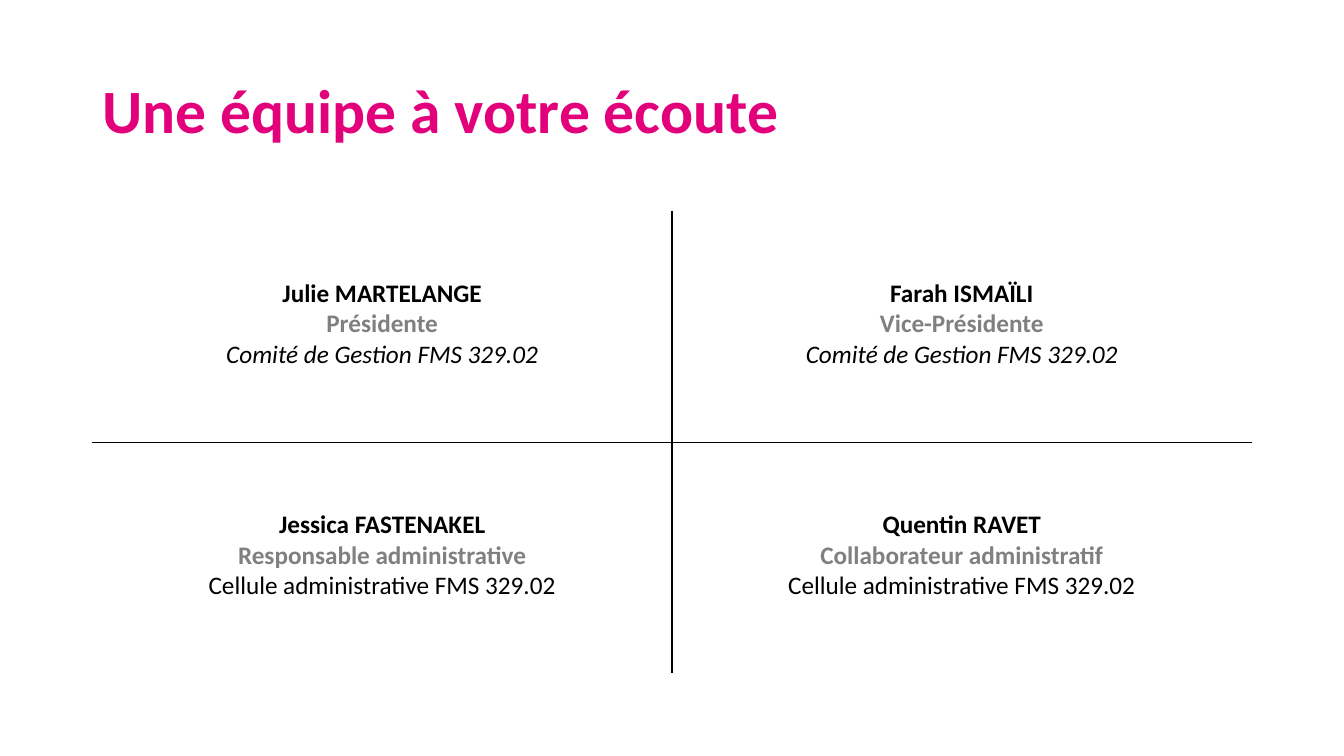
from lxml import etree
from pptx import Presentation
from pptx.dml.color import RGBColor
from pptx.enum.text import MSO_ANCHOR as Anchor, PP_ALIGN as Align
from pptx.oxml.ns import qn
from pptx.util import Pt

BLACK, WHITE, GREY, PINK = "000000", "FFFFFF", "808080", "E2017B"


def style(font, size, color, bold=False, italic=False):
    font.name, font.size = "Calibri", Pt(size)
    font.color.rgb = RGBColor.from_string(color)
    font.bold, font.italic = bold, italic


def add_border(cell, side, color):
    properties = cell._tc.get_or_add_tcPr()
    line = etree.SubElement(properties, qn(f"a:{side}"), w=str(Pt(1)))
    fill = etree.SubElement(line, qn("a:solidFill"))
    etree.SubElement(fill, qn("a:srgbClr"), val=color)


deck = Presentation()
deck.slide_width, deck.slide_height = Pt(960), Pt(540)
page = deck.slides.add_slide(deck.slide_layouts[5])

# Title
title = page.shapes.title
title.left, title.top, title.width, title.height = Pt(66), Pt(28.75), Pt(828), Pt(104.4)
title.text_frame.text = "Une équipe à votre écoute"
title.text_frame.vertical_anchor = Anchor.MIDDLE
title.text_frame.word_wrap = True
heading = title.text_frame.paragraphs[0]
heading.alignment = Align.LEFT
heading.line_spacing = 0.9
style(heading.font, 44, PINK, bold=True)

# Team members: name, role, body
committee = "Comité de Gestion FMS 329.02"
office = "Cellule administrative FMS 329.02"
team = [
    [("Julie MARTELANGE", "Présidente", committee),
     ("Farah ISMAÏLI", "Vice-Présidente", committee)],
    [("Jessica FASTENAKEL", "Responsable administrative", office),
     ("Quentin RAVET", "Collaborateur administratif", office)],
]

# Two by two table, ruled only on the inside
frame = page.shapes.add_table(2, 2, Pt(66), Pt(151), Pt(828), Pt(330.5))
table = frame.table
table.first_row = table.horz_banding = False
for row, members in enumerate(team):
    for column, member in enumerate(members):
        cell = table.cell(row, column)
        inner_sides = ("lnL" if column else "lnR", "lnT" if row else "lnB")
        for side in ("lnL", "lnR", "lnT", "lnB"):
            add_border(cell, side, BLACK if side in inner_sides else WHITE)
        cell.fill.background()
        cell.margin_top = Pt(47.6)

        # One paragraph for each line of the member's details
        cell.text = "\n".join(member)
        name, role, body = cell.text_frame.paragraphs
        style(name.font, 18, BLACK, bold=True)
        style(role.font, 18, GREY, bold=True)
        style(body.font, 18, BLACK, italic=(row == 0))
        for para in (name, role, body):
            para.alignment = Align.CENTER

deck.save("out.pptx")
